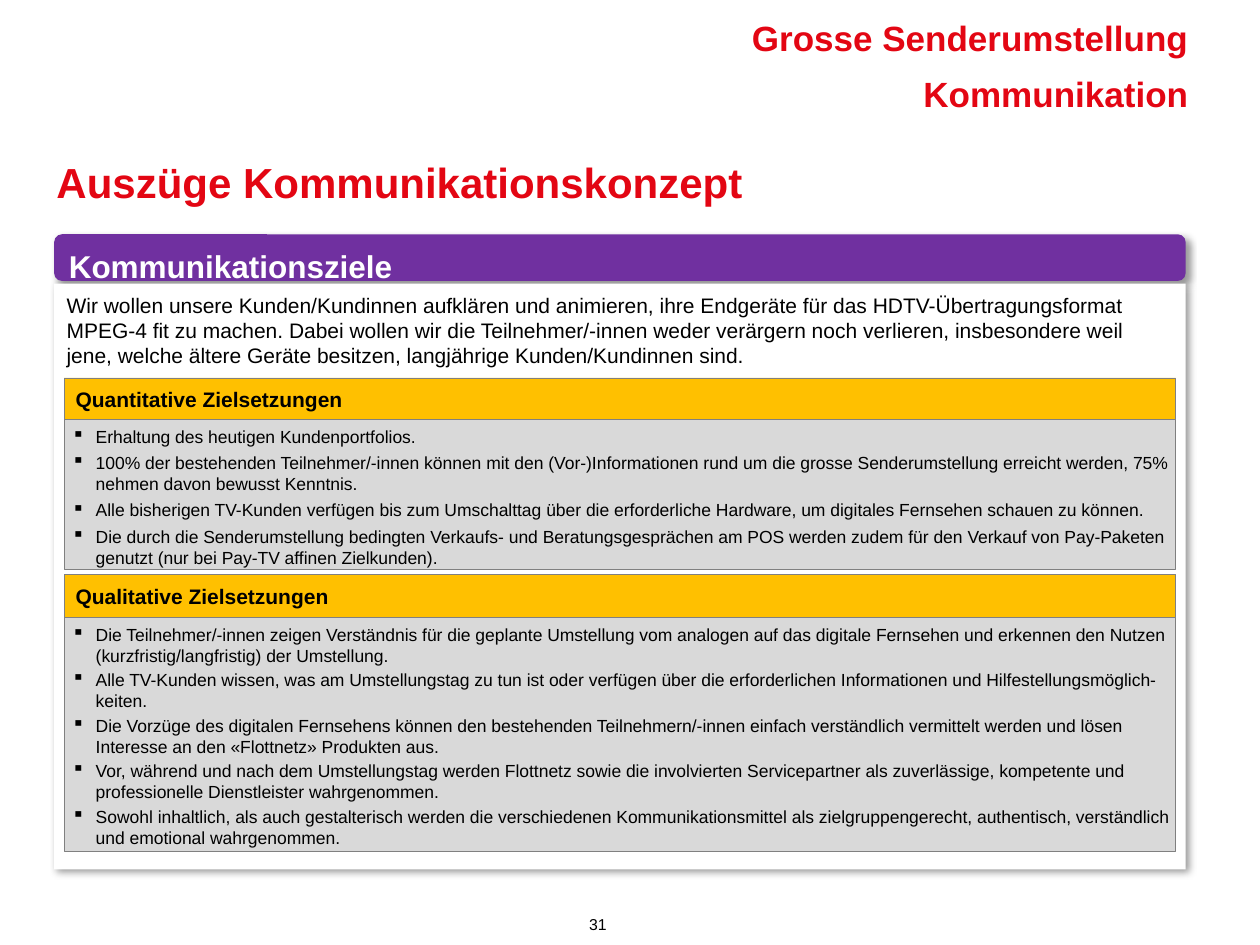
import pptx
import pptx.util
import pptx.dml.color
import pptx.enum.shapes
import pptx.enum.text
import pptx.oxml
import pptx.oxml.ns

ALIGN = pptx.enum.text.PP_ALIGN
FORM = pptx.enum.shapes.MSO_SHAPE
MIDDLE = pptx.enum.text.MSO_ANCHOR.MIDDLE
RED, GOLD, GREY = "E30613", "FFC000", "D9D9D9"
COLS, ROWS = 100, 75

AIM = (
    "Wir wollen unsere Kunden/Kundinnen aufklären und animieren, ihre Endgeräte für das "
    "HDTV-Übertragungsformat MPEG-4 fit zu machen. Dabei wollen wir die Teilnehmer/-innen "
    "weder verärgern noch verlieren, insbesondere weil jene, welche ältere Geräte besitzen, "
    "langjährige Kunden/Kundinnen sind."
)
COUNTS = [
    "Erhaltung des heutigen Kundenportfolios.",
    "100% der bestehenden Teilnehmer/-innen können mit den (Vor-)Informationen rund um die "
    "grosse Senderumstellung erreicht werden, 75% nehmen davon bewusst Kenntnis.",
    "Alle bisherigen TV-Kunden verfügen bis zum Umschalttag über die erforderliche Hardware, "
    "um digitales Fernsehen schauen zu können.",
    "Die durch die Senderumstellung bedingten Verkaufs- und Beratungsgesprächen am POS werden "
    "zudem für den Verkauf von Pay-Paketen genutzt (nur bei Pay-TV affinen Zielkunden).",
]
VALUES = [
    "Die Teilnehmer/-innen zeigen Verständnis für die geplante Umstellung vom analogen auf das "
    "digitale Fernsehen und erkennen den Nutzen (kurzfristig/langfristig) der Umstellung.",
    "Alle TV-Kunden wissen, was am Umstellungstag zu tun ist oder verfügen über die "
    "erforderlichen Informationen und Hilfestellungsmöglich-keiten.",
    "Die Vorzüge des digitalen Fernsehens können den bestehenden Teilnehmern/-innen einfach "
    "verständlich vermittelt werden und lösen Interesse an den «Flottnetz» Produkten aus.",
    "Vor, während und nach dem Umstellungstag werden Flottnetz sowie die involvierten "
    "Servicepartner als zuverlässige, kompetente und professionelle Dienstleister wahrgenommen.",
    "Sowohl inhaltlich, als auch gestalterisch werden die verschiedenen Kommunikationsmittel "
    "als zielgruppengerecht, authentisch, verständlich und emotional wahrgenommen.",
]


def paint(code):
    return pptx.dml.color.RGBColor.from_string(code)


def apply(item, values):
    for name, value in values.items():
        setattr(item, name, value)


class Deck:
    face = "Arial"
    edge = "808080"

    def __init__(self):
        self.file = pptx.Presentation()
        apply(self.file, {"slide_width": pptx.util.Inches(10),
                          "slide_height": pptx.util.Inches(7.5)})
        self.page = self.file.slides.add_slide(self.file.slide_layouts[6])

    def place(self, left, top, width, height):
        col = self.file.slide_width / COLS
        row = self.file.slide_height / ROWS
        return [int(v) for v in (left * col, top * row, width * col, height * row)]

    def letter(self, shape, lines, size, color="000000", bold=False, align=ALIGN.LEFT,
               pads=None, anchor=pptx.enum.text.MSO_ANCHOR.TOP, bullet=False, gap=0):
        frame = shape.text_frame
        left, top, right, base = pads or (0.1, 0.05 + size / 600, 0.1, 0.05)
        apply(frame, {"word_wrap": True, "vertical_anchor": anchor,
                      "margin_left": pptx.util.Inches(left),
                      "margin_top": pptx.util.Inches(top),
                      "margin_right": pptx.util.Inches(right),
                      "margin_bottom": pptx.util.Inches(base)})
        for rank, line in enumerate(lines):
            para = frame.add_paragraph() if rank else frame.paragraphs[0]
            para.alignment = align
            if rank:
                para.space_before = pptx.util.Pt(gap)
            if bullet:
                self.mark(para)
            run = para.add_run()
            run.text = line
            apply(run.font, {"name": self.face, "size": pptx.util.Pt(size), "bold": bold})
            run.font.color.rgb = paint(color)

    def mark(self, para):
        props = para._p.get_or_add_pPr()
        dent = pptx.util.Inches(0.19)
        props.set("marL", str(dent))
        props.set("indent", str(-dent))
        sign = pptx.oxml.ns.qn("a:buChar")
        node = props.makeelement(sign, {"char": "▪"})
        props.append(node)

    def label(self, spot, line, size, **style):
        box = self.page.shapes.add_textbox(*self.place(*spot))
        self.letter(box, [line], size, **style)

    def panel(self, spot, fill, form=FORM.RECTANGLE, line=False, shade=False):
        shape = self.page.shapes.add_shape(form, *self.place(*spot))
        shape.shadow.inherit = False
        shape.fill.solid()
        shape.fill.fore_color.rgb = paint(fill)
        if line:
            shape.line.color.rgb = paint(self.edge)
            shape.line.width = pptx.util.Pt(0.25)
        else:
            shape.line.fill.background()
        if shade:
            self.shade(shape)
        return shape

    def shade(self, shape):
        blur, dist = pptx.util.Pt(4), pptx.util.Pt(3)
        glow = pptx.oxml.parse_xml(
            f'<a:outerShdw {pptx.oxml.ns.nsdecls("a")} blurRad="{blur}" dist="{dist}" '
            'dir="2700000" algn="tl" rotWithShape="0"><a:srgbClr val="000000">'
            '<a:alpha val="40000"/></a:srgbClr></a:outerShdw>')
        shape._element.spPr.find(pptx.oxml.ns.qn("a:effectLst")).append(glow)

    def block(self, top, head, body, title, points, gap):
        left, width = 5.1, 88.2
        bar = self.panel((left, top, width, head), GOLD, line=True)
        self.letter(bar, [title], 12, bold=True, anchor=MIDDLE, pads=(0.09, 0.09, 0.02, 0.09))
        area = self.panel((left, top + head, width, body), GREY, line=True)
        self.letter(area, points, 10, bullet=True, gap=gap, pads=(0.06, 0.05, 0, 0.05))


def main():
    deck = Deck()
    for rank, line in enumerate(["Grosse Senderumstellung", "Kommunikation"]):
        deck.label((42.9, 0.5 + 4.4 * rank, 52.4, 4.4), line, 20,
                   color=RED, bold=True, align=ALIGN.RIGHT)
    deck.label((3.5, 11.5, 90.6, 5.5), "Auszüge Kommunikationskonzept", 24, color=RED, bold=True)

    band = deck.panel((4.3, 18.6, 89.8, 3.7), "7030A0", FORM.ROUNDED_RECTANGLE, shade=True)
    deck.letter(band, ["Kommunikationsziele"], 18, color="FFFFFF", bold=True)
    card = deck.panel((4.3, 22.5, 89.8, 46.5), "FFFFFF", shade=True)
    deck.letter(card, [AIM], 12)

    deck.block(30, 3.3, 11.9, "Quantitative Zielsetzungen", COUNTS, 3)
    deck.block(45.6, 3.4, 18.6, "Qualitative Zielsetzungen", VALUES, 2)
    deck.label((35.8, 72.1, 23.3, 2.9), "31", 9, align=ALIGN.CENTER,
               pads=(0.1, 0.05, 0.1, 0.05))
    deck.file.save("out.pptx")


if __name__ == "__main__":
    main()
